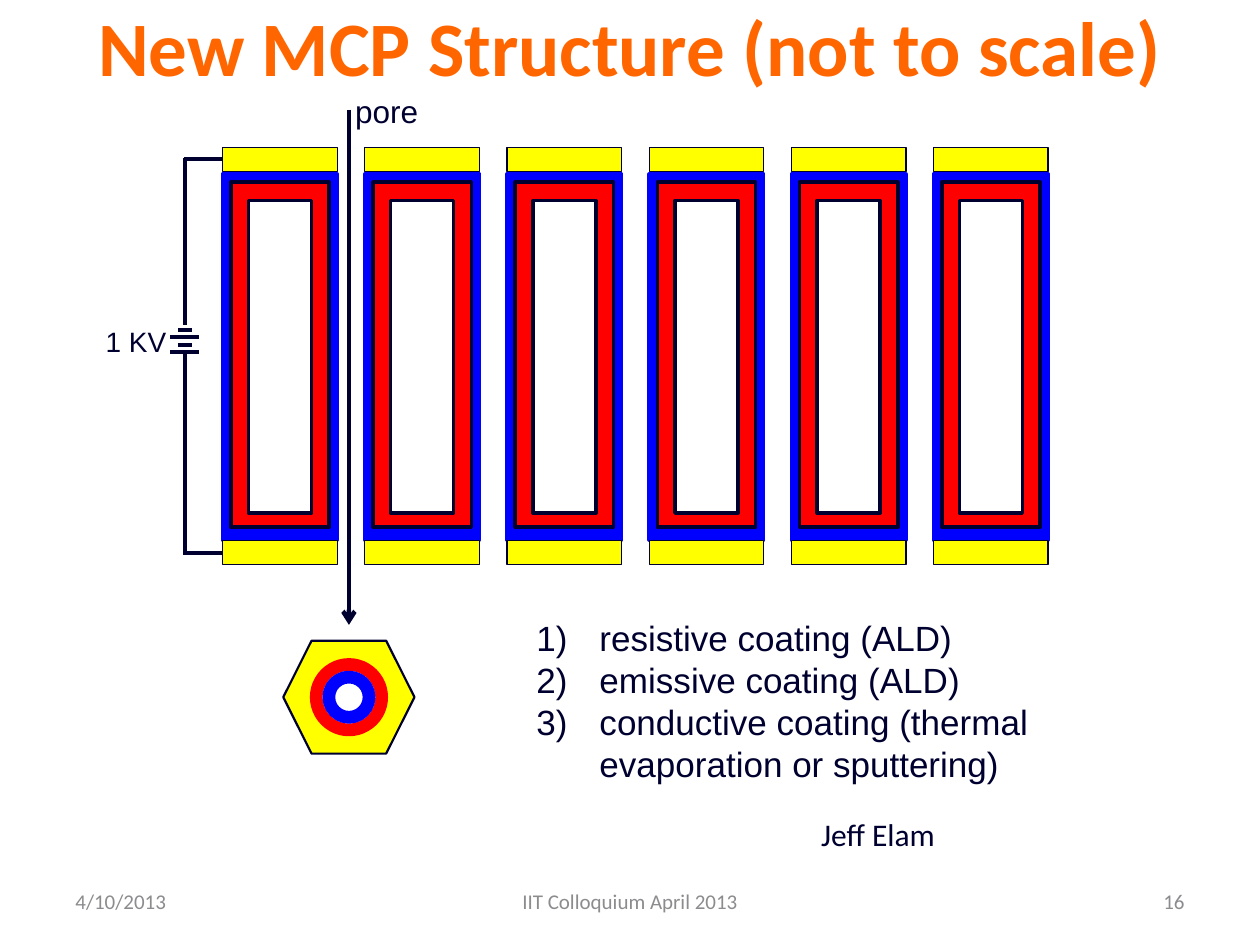
from lxml import etree
from pptx import Presentation
from pptx.dml.color import RGBColor
from pptx.enum.shapes import MSO_CONNECTOR, MSO_SHAPE
from pptx.enum.text import MSO_ANCHOR as Anchor, PP_ALIGN as Align
from pptx.oxml.ns import qn
from pptx.util import Pt

INK, YELLOW, BLUE, RED, WHITE = "000030", "FFFF00", "0000FF", "FF0000", "FFFFFF"
ORANGE, GRAY = "FF6600", "8C8C8F"

# Text boxes: text, (left, top, width, height), size, font, colour, options
LABELS = [
    ("New MCP Structure (not to scale)", (36, 0, 648, 57), 44, "Calibri", ORANGE,
     dict(bold=True, align=Align.CENTER, inset_top=0)),
    ("pore", (195.8, 49, 51, 29), 18, "Arial", INK, dict(wrap=False)),
    ("1 KV", (53.3, 182.2, 49.7, 26.6), 16, "Arial", INK, dict(wrap=False)),
    ("Jeff Elam", (462.2, 462.2, 257.8, 32.4), 18, "Calibri", INK, {}),
    ("4/10/2013", (36, 500.4, 168, 28.8), 12, "Calibri", GRAY,
     dict(anchor=Anchor.MIDDLE)),
    ("IIT Colloquium April 2013", (246, 500.4, 228, 28.8), 12, "Calibri", GRAY,
     dict(anchor=Anchor.MIDDLE, align=Align.CENTER)),
    ("16", (516, 500.4, 168, 28.8), 12, "Calibri", GRAY,
     dict(anchor=Anchor.MIDDLE, align=Align.RIGHT)),
]
COATINGS = [
    "resistive coating (ALD)",
    "emissive coating (ALD)",
    "conductive coating (thermal evaporation or sputtering)",
]
COATINGS_FRAME = (299.5, 348.5, 355.7, 104.4)

# Parts of one plate wall: inset from its left, top, width, height, fill, line, line width
WALL_COUNT, WALL_LEFT, WALL_PITCH = 6, 127.2, 81.25
WALL_PARTS = [
    (0, 99.5, 65.5, 209, BLUE, BLUE, 2),
    (4.7, 104, 56.2, 197.3, RED, INK, 2),
    (14.8, 114.6, 36, 178.6, WHITE, INK, 2),
    (0, 84.2, 65.5, 13.8, YELLOW, INK, 0.75),
    (0, 308.9, 65.5, 13.8, YELLOW, INK, 0.75),
]

# Pore seen from the end: diameter and line colour of each ring
PORE_X, PORE_Y = 199.4, 398.4
RINGS = [(37.4, RED), (23, BLUE)]
PORE_ARROW = (PORE_X, 62.6, PORE_X, 357.1)

BATTERY_X = 105.7
WIRES = [
    (127, 90.9, 105, 90.9),
    (BATTERY_X, 90, BATTERY_X, 186),
    (127, 316, 104.5, 316),
    (BATTERY_X, 202, BATTERY_X, 316),
]
# Battery plates: height on the page, half length
BATTERY_PLATES = [(188.6, 4), (192.6, 8.3), (197.1, 4), (201.1, 8.3)]


def rgb(color):
    return RGBColor.from_string(color)


def add_shape(page, kind, frame, fill, line, width):
    shape = page.shapes.add_shape(kind, *map(Pt, frame))
    shape.shadow.inherit = False
    shape.fill.solid()
    shape.fill.fore_color.rgb = rgb(fill)
    shape.line.color.rgb = rgb(line)
    shape.line.width = Pt(width)
    return shape


def add_line(page, ends, arrow=False):
    line = page.shapes.add_connector(MSO_CONNECTOR.STRAIGHT, *map(Pt, ends))
    line.line.color.rgb = rgb(INK)
    line.line.width = Pt(2.5)
    if arrow:
        etree.SubElement(line.line._get_or_add_ln(), qn("a:tailEnd"), type="arrow")
    etree.SubElement(line._element.spPr, qn("a:effectLst"))


def add_span(para, text, size, font, color, bold=False):
    span = para.add_run()
    span.text = text
    span.font.size = Pt(size)
    span.font.name = font
    span.font.bold = bold
    span.font.color.rgb = rgb(color)


def add_label(page, text, frame, size, font, color, bold=False, wrap=True,
              align=Align.LEFT, anchor=Anchor.TOP, inset_top=3.6):
    box = page.shapes.add_textbox(*map(Pt, frame)).text_frame
    box.word_wrap = wrap
    box.vertical_anchor = anchor
    box.margin_top = Pt(inset_top)
    para = box.paragraphs[0]
    para.alignment = align
    add_span(para, text, size, font, color, bold)


def add_numbered_list(page, items, frame):
    box = page.shapes.add_textbox(*map(Pt, frame)).text_frame
    box.word_wrap = True
    for index, item in enumerate(items):
        para = box.add_paragraph() if index else box.paragraphs[0]
        props = para._p.get_or_add_pPr()
        props.set("marL", str(Pt(36)))
        props.set("indent", str(-Pt(36)))
        etree.SubElement(props, qn("a:buFont"), typeface="Arial")
        etree.SubElement(props, qn("a:buAutoNum"), type="arabicParenR")
        add_span(para, item, 20, "Arial", INK)


def add_pore_end(page):
    hexagon = add_shape(page, MSO_SHAPE.HEXAGON,
                        (PORE_X - 37.5, PORE_Y - 32.4, 75, 64.8), YELLOW, INK, 1.25)
    hexagon.adjustments[0] = 0.25
    hexagon.adjustments[1] = 1.15
    for size, color in RINGS:
        frame = (PORE_X - size / 2, PORE_Y - size / 2, size, size)
        add_shape(page, MSO_SHAPE.OVAL, frame, WHITE, color, 7.25)


def main():
    deck = Presentation()
    deck.slide_width, deck.slide_height = Pt(720), Pt(540)
    page = deck.slides.add_slide(deck.slide_layouts[6])

    for inset, top, width, height, fill, line, weight in WALL_PARTS:
        for column in range(WALL_COUNT):
            left = WALL_LEFT + column * WALL_PITCH + inset
            add_shape(page, MSO_SHAPE.RECTANGLE, (left, top, width, height),
                      fill, line, weight)

    add_line(page, PORE_ARROW, arrow=True)
    add_pore_end(page)
    for wire in WIRES:
        add_line(page, wire)
    for y, half in BATTERY_PLATES:
        add_line(page, (BATTERY_X - half, y, BATTERY_X + half, y))

    for text, frame, size, font, color, options in LABELS:
        add_label(page, text, frame, size, font, color, **options)
    add_numbered_list(page, COATINGS, COATINGS_FRAME)
    deck.save("out.pptx")


if __name__ == "__main__":
    main()
